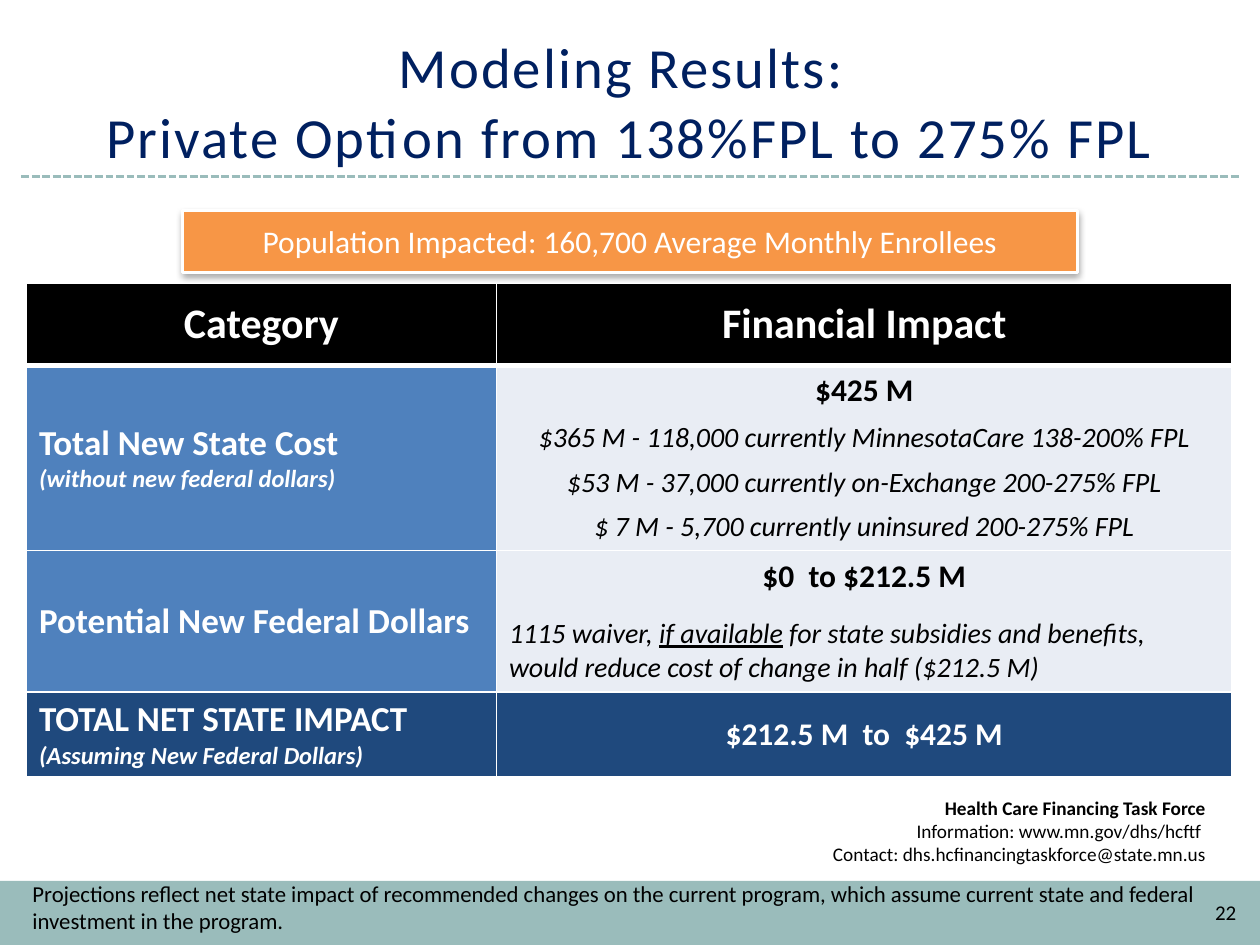
"""Build the slide on modeling results for the private option."""
from lxml.etree import SubElement as Sub
from pptx import Presentation
from pptx.dml.color import RGBColor as Rgb
from pptx.enum.dml import MSO_LINE as Dash
from pptx.enum.shapes import MSO_CONNECTOR as Conn, MSO_SHAPE as Kind
from pptx.enum.text import MSO_ANCHOR as Anchor, PP_ALIGN as Align
from pptx.oxml import parse_xml
from pptx.oxml.ns import nsdecls, qn
from pptx.util import Inches, Pt

COLS, ROWS = 100, 75
WIDE, HIGH = Inches(10), Inches(7.5)
HUES = {"teal": "9ABCBB", "navy": "002060", "orange": "F79646", "blue": "4F81BD",
        "pale": "E9EDF4", "deep": "1F497D", "white": "FFFFFF", "black": "000000"}
LEFT, MID, RIGHT = Align.LEFT, Align.CENTER, Align.RIGHT


def hue(name):
    """Return the named colour."""
    return Rgb.from_string(HUES[name])


def span(*cells):
    """Turn columns and rows, in x, y order, into lengths."""
    return [round(n * (HIGH / ROWS if i % 2 else WIDE / COLS)) for i, n in enumerate(cells)]


def para(text, size, style="", side=LEFT, gap=(0, 0)):
    """Describe a paragraph; text is a string or a list of (text, style) runs."""
    return {"runs": text if isinstance(text, list) else [(text, "")],
            "size": size, "style": style, "side": side, "gap": gap}


def mark(font, style):
    """Apply the letters b, i and u of a style to a font."""
    for key, name in zip("biu", ("bold", "italic", "underline")):
        if key in style:
            setattr(font, name, True)


def write(frame, paras, color, anchor=Anchor.MIDDLE):
    """Fill a text frame with paragraphs."""
    frame.word_wrap = True
    frame.vertical_anchor = anchor
    for i, item in enumerate(paras):
        line = frame.add_paragraph() if i else frame.paragraphs[0]
        line.alignment = item["side"]
        line.space_before, line.space_after = map(Pt, item["gap"])
        font = line.font
        font.name, font.size, font.color.rgb = "Calibri", Pt(item["size"]), hue(color)
        font.bold = font.italic = False
        mark(font, item["style"])
        for text, style in item["runs"]:
            if text == "\n":
                line.add_line_break()
                continue
            run = line.add_run()
            run.text = text
            mark(run.font, style)


def block(slide, area, fill):
    """Add a plain filled rectangle."""
    shape = slide.shapes.add_shape(Kind.RECTANGLE, *span(*area))
    shape.shadow.inherit = False
    shape.fill.solid()
    shape.fill.fore_color.rgb = hue(fill)
    shape.line.fill.background()
    return shape


def label(slide, area, paras):
    """Add a text box in black."""
    write(slide.shapes.add_textbox(*span(*area)).text_frame, paras, "black")


def rule(slide, *ends):
    """Add the dashed line below the title."""
    line = slide.shapes.add_connector(Conn.STRAIGHT, *span(*ends))
    line.line.color.rgb, line.line.width = hue("teal"), Pt(1.5)
    line.line.dash_style = Dash.SQUARE_DOT
    Sub(line._element.spPr, qn("a:effectLst"))


def head(slide):
    """Place and format the title."""
    title = slide.shapes.title
    title.left, title.top, title.width, title.height = span(3.3, 2.5, 93.3, 11.5)
    text = [("Modeling Results: ", ""), ("\n", ""),
            ("Private Option from 138%FPL to 275% FPL", "")]
    write(title.text_frame, [para(text, 32.4, side=MID)], "navy", Anchor.BOTTOM)
    line = title.text_frame.paragraphs[0]
    line.line_spacing = Pt(40)
    for run in line.runs:
        run._r.get_or_add_rPr().set("spc", "120")


def banner(slide):
    """Add the orange banner with its soft shadow."""
    shape = block(slide, (14.5, 16.7, 71, 4.9), "orange")
    shape.line.color.rgb, shape.line.width = hue("white"), Pt(1.57)
    glow = shape._element.spPr.find(qn("a:effectLst"))
    glow.append(parse_xml(
        f'<a:outerShdw {nsdecls("a")} blurRad="{Pt(4)}" dist="{Pt(2)}" dir="5400000" '
        f'rotWithShape="0"><a:srgbClr val="{HUES["black"]}"><a:alpha val="35000"/>'
        '</a:srgbClr></a:outerShdw>'))
    write(shape.text_frame,
          [para("Population Impacted: 160,700 Average Monthly Enrollees", 18, side=MID)], "white")


def edge(cell, under):
    """Draw white borders on a cell, the lower one as wide as given."""
    props = cell._tc.get_or_add_tcPr()
    for i, (side, wide) in enumerate(zip("LRTB", (1, 1, 1, under))):
        props.insert(i, parse_xml(
            f'<a:ln{side} {nsdecls("a")} w="{Pt(wide)}"><a:solidFill>'
            f'<a:srgbClr val="{HUES["white"]}"/></a:solidFill></a:ln{side}>'))


def grid(slide, area, wides, highs, rows):
    """Add the table; each row is a list of (fill, ink, anchor, paragraphs)."""
    table = slide.shapes.add_table(len(rows), len(wides), *span(*area)).table
    table.horz_banding = False
    for col, wide in zip(table.columns, wides):
        col.width = span(wide)[0]
    for i, (row, high, cells) in enumerate(zip(table.rows, highs, rows)):
        row.height = span(0, high)[1]
        for cell, (fill, ink, anchor, paras) in zip(row.cells, cells):
            cell.fill.solid()
            cell.fill.fore_color.rgb = hue(fill)
            edge(cell, 1 if i else 3)
            write(cell.text_frame, paras, ink)
            cell.vertical_anchor = anchor


def data():
    """Return the rows of the impact table."""
    mid, top, low = Anchor.MIDDLE, Anchor.TOP, Anchor.BOTTOM
    costs = ["$365 M - 118,000 currently MinnesotaCare 138-200% FPL",
             "$53 M - 37,000 currently on-Exchange 200-275% FPL",
             "$ 7 M - 5,700 currently uninsured 200-275% FPL"]
    waiver = [("1115 waiver, ", ""), ("if available", "u"),
              (" for state subsidies and benefits, would reduce cost of change "
               "in half ($212.5 M)", "")]
    return [
        [("black", "white", mid, [para(text, 24, "b", MID)])
         for text in ("Category", "Financial Impact")],
        [("blue", "white", mid, [para("Total New State Cost", 20, "b"),
                                 para("(without new federal dollars)", 14, "bi")]),
         ("pale", "black", top, [para("$425 M", 18, "b", MID, (0, 6))]
          + [para(text, 16, "i", MID, (0, 6)) for text in costs])],
        [("blue", "white", mid, [para("Potential New Federal Dollars", 20, "b")]),
         ("pale", "black", mid, [para("$0  to $212.5 M", 18, "b", MID, (0, 6)),
                                 para(waiver, 16, "i", gap=(6, 6))])],
        [("deep", "white", low, [para("TOTAL NET STATE IMPACT", 20, "b"),
                                 para("(Assuming New Federal Dollars)", 14, "bi")]),
         ("deep", "white", mid, [para("$212.5 M  to  $425 M", 18, "b", MID)])],
    ]


def main():
    """Build and save the slide."""
    deck = Presentation()
    deck.slide_width, deck.slide_height = WIDE, HIGH
    slide = deck.slides.add_slide(deck.slide_layouts[5])
    block(slide, (0, 69.9, COLS, 5.1), "teal")
    rule(slide, 1.7, 14, 98.3, 14)
    force = [("Health Care Financing Task Force", "b"), ("\n", ""),
             ("Information: www.mn.gov/dhs/hcftf ", "")]
    contact = "Contact: dhs.hcfinancingtaskforce@state.mn.us"
    write(block(slide, (45.4, 62.6, 51.3, 6.7), "white").text_frame,
          [para(text, 11, side=RIGHT) for text in (force, contact)], "black")
    head(slide)
    banner(slide)
    grid(slide, (2.1, 22.5, 95.7, 39), (37.3, 58.4), (6.5, 14.6, 11.2, 6.7), data())
    label(slide, (1.6, 68.9, 98.4, 6.1), [para(
        "Projections reflect net state impact of recommended changes on the current program, "
        "which assume current state and federal investment in the program.", 13)])
    label(slide, (93.3, 70.4, 5.8, 4), [para("22", 12, side=RIGHT)])
    deck.save("out.pptx")


if __name__ == "__main__":
    main()
